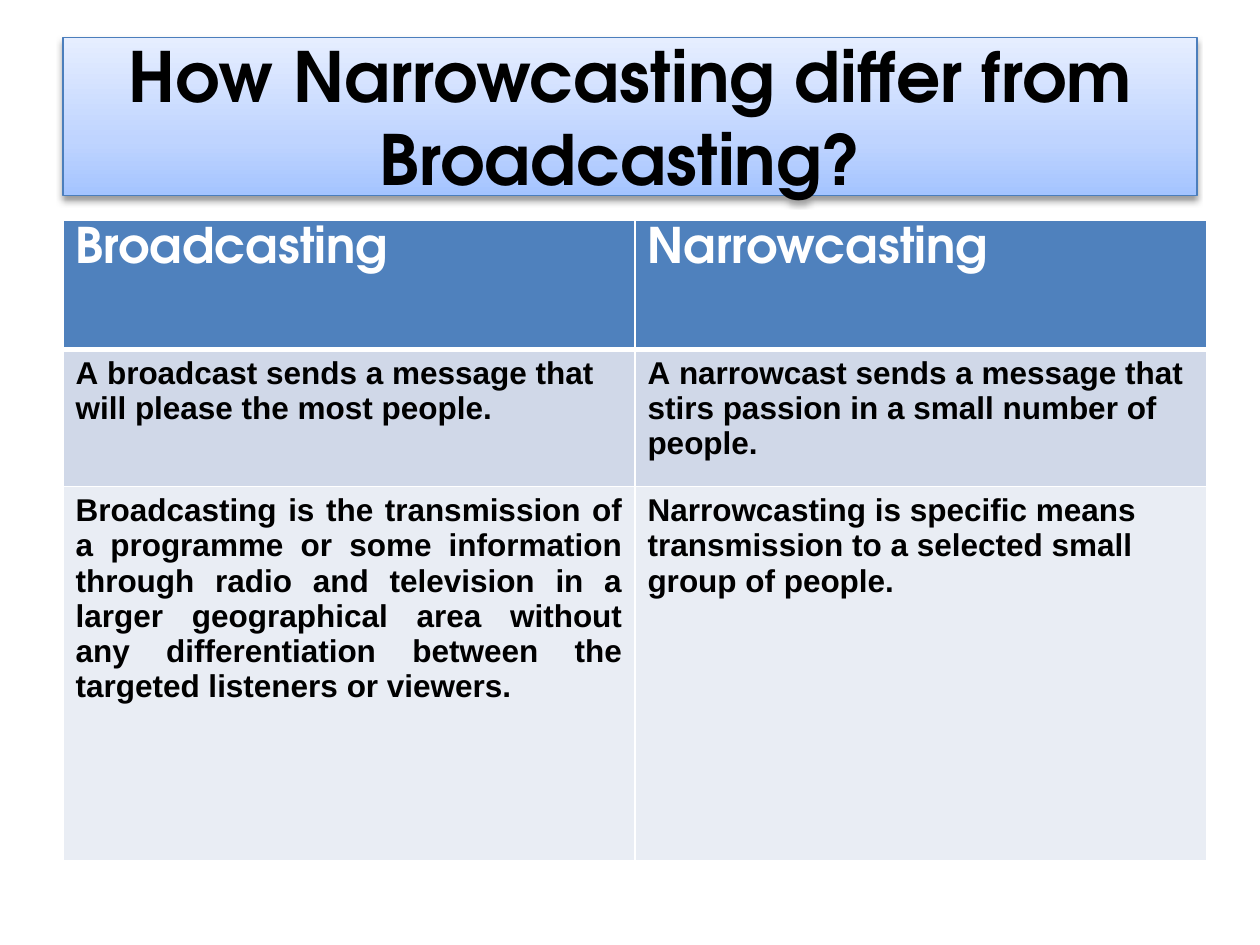
from itertools import product
from lxml import etree
from pptx import Presentation
from pptx import util as u
from pptx.dml.color import RGBColor
from pptx.enum import shapes, text
from pptx.oxml.ns import qn

COLORS = {
    "ink": "000000", "white": "FFFFFF", "edge": "4B7EBC",
    "header": "4F81BD", "band": "D0D8E8", "pale": "E9EDF4",
}
TITLE_GRADIENT = [(0, "A4C4FF"), (35, "BFD4FF"), (100, "E6EEFF")]
HEADING_FONT, BODY_FONT = "TeX Gyre Adventor", "Arial"
LEFT = text.PP_ALIGN.LEFT
CENTER = text.PP_ALIGN.CENTER
JUSTIFY = text.PP_ALIGN.JUSTIFY

TITLE = "How Narrowcasting differ from Broadcasting? "
COMPARISON = [
    ("Broadcasting", "Narrowcasting"),
    ("A\u00a0broadcast\u00a0sends a message that will please the most people.",
     "A\u00a0narrowcast\u00a0sends a message that stirs passion in a small number of people."),
    ("Broadcasting is the transmission of a programme or some information through "
     "radio and television in a larger geographical area without any differentiation "
     "between the targeted listeners or viewers. ",
     "Narrowcasting is specific means transmission to a selected small group of people.\u00a0"),
]
ROW_HEIGHTS = [2.59, 2.77, 7.54]
ROW_FILLS = ["header", "band", "pale"]
COLUMN_WIDTH = 11.53
MARGIN = 1.27


def rgb(name):
    return RGBColor.from_string(COLORS[name])


def write(frame, words, size=18, font=BODY_FONT, color="ink", align=LEFT):
    paragraph = frame.paragraphs[0]
    paragraph.alignment = align
    run = paragraph.add_run()
    run.text = words
    run.font.size = u.Pt(size)
    run.font.name = font
    run.font.bold = True
    run.font.color.rgb = rgb(color)


def add_color(parent, value):
    return etree.SubElement(parent, qn("a:srgbClr"), val=value)


def add_border(cell, side, width):
    line = etree.SubElement(cell._tc.get_or_add_tcPr(), qn(f"a:ln{side}"), w=str(u.Pt(width)))
    add_color(etree.SubElement(line, qn("a:solidFill")), COLORS["white"])


def add_title(slide):
    banner = slide.shapes.add_shape(
        shapes.MSO_SHAPE.RECTANGLE, u.Cm(MARGIN), u.Cm(0.76), u.Cm(22.86), u.Cm(3.18))
    banner.line.color.rgb = rgb("edge")
    banner.line.width = u.Pt(0.75)
    banner.fill.gradient()
    banner.fill.gradient_angle = 90
    stops = banner._element.spPr.find(".//" + qn("a:gsLst"))
    for stop in list(stops):
        stops.remove(stop)
    for position, value in TITLE_GRADIENT:
        add_color(etree.SubElement(stops, qn("a:gs"), pos=str(position * 1000)), value)

    banner.shadow.inherit = False
    effects = banner._element.spPr.find(qn("a:effectLst"))
    shadow = etree.SubElement(
        effects, qn("a:outerShdw"), blurRad=str(u.Pt(3.1)), dist=str(u.Pt(1.6)),
        dir="5400000", rotWithShape="0")
    etree.SubElement(add_color(shadow, COLORS["ink"]), qn("a:alpha"), val="38000")

    banner.text_frame.word_wrap = True
    banner.text_frame.vertical_anchor = text.MSO_ANCHOR.MIDDLE
    write(banner.text_frame, TITLE, size=39.6, font=HEADING_FONT, align=CENTER)


def add_comparison(slide):
    comparison = slide.shapes.add_table(
        3, 2, u.Cm(MARGIN), u.Cm(4.45), u.Cm(2 * COLUMN_WIDTH), u.Cm(sum(ROW_HEIGHTS))).table
    for column in comparison.columns:
        column.width = u.Cm(COLUMN_WIDTH)
    for row, height in zip(comparison.rows, ROW_HEIGHTS):
        row.height = u.Cm(height)

    for r, c in product(range(3), range(2)):
        cell = comparison.cell(r, c)
        for side in "LRTB":
            under_header = (r, side) in [(0, "B"), (1, "T")]
            add_border(cell, side, 3 if under_header else 1)
        cell.fill.solid()
        cell.fill.fore_color.rgb = rgb(ROW_FILLS[r])
        if r == 0:
            look = dict(size=28, font=HEADING_FONT, color="white")
        else:
            look = dict(align=JUSTIFY if (r, c) == (2, 0) else LEFT)
        write(cell.text_frame, COMPARISON[r][c], **look)


def main():
    deck = Presentation()
    deck.slide_width, deck.slide_height = u.Cm(25.4), u.Cm(19.05)
    slide = deck.slides.add_slide(deck.slide_layouts[6])
    add_title(slide)
    add_comparison(slide)
    deck.save("out.pptx")


if __name__ == "__main__":
    main()
